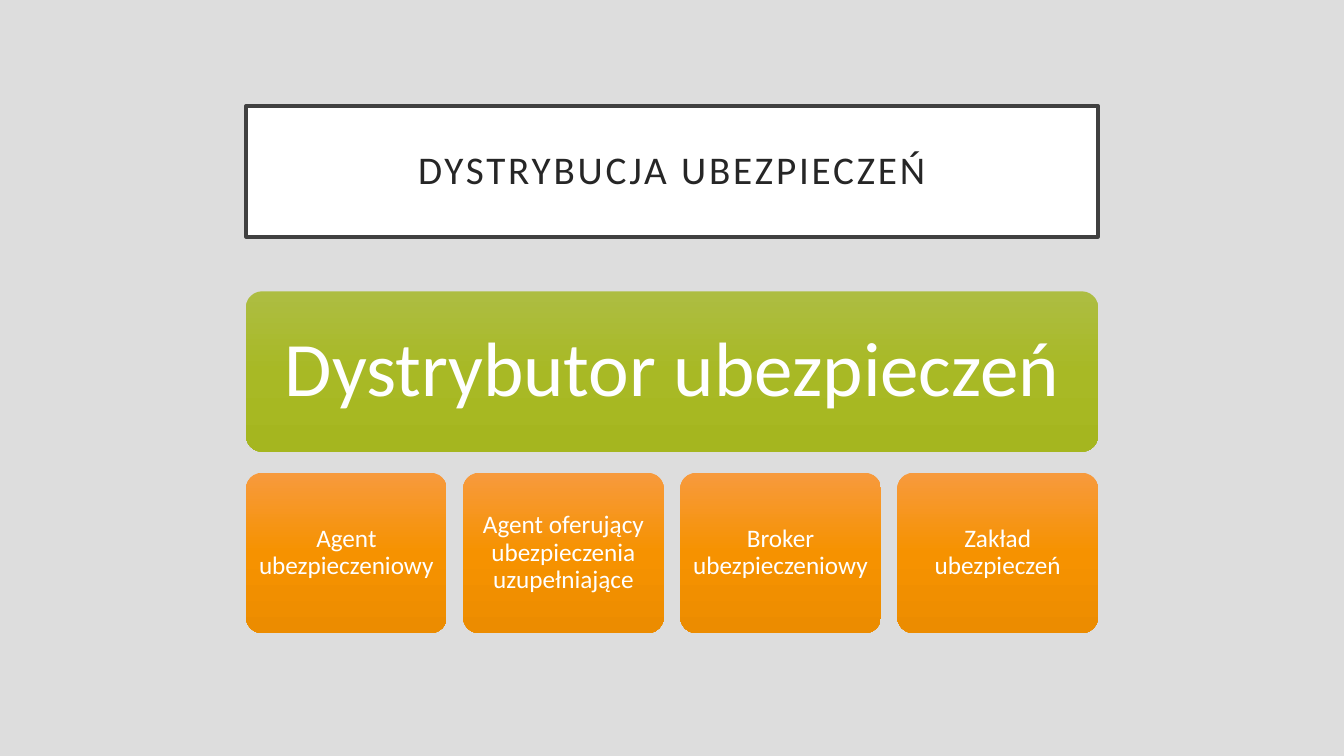
from copy import deepcopy

from pptx import Presentation
from pptx.dml.color import RGBColor
from pptx.enum.shapes import MSO_SHAPE
from pptx.enum.text import MSO_ANCHOR, MSO_AUTO_SIZE, PP_ALIGN
from pptx.oxml.ns import qn
from pptx.util import Inches, Pt

# Content
TITLE = "DYSTRYBUCJA UBEZPIECZEŃ"
HEADING = "Dystrybutor ubezpieczeń"
DISTRIBUTORS = [
    "Agent ubezpieczeniowy",
    "Agent oferujący ubezpieczenia uzupełniające",
    "Broker ubezpieczeniowy",
    "Zakład ubezpieczeń",
]

# Colours
BACKGROUND = RGBColor(0xDD, 0xDD, 0xDD)
WHITE = RGBColor(0xFF, 0xFF, 0xFF)
FRAME = RGBColor(0x40, 0x40, 0x40)
TITLE_TEXT = RGBColor(0x26, 0x26, 0x26)
GREENS = [RGBColor(0xAD, 0xBD, 0x42), RGBColor(0xA8, 0xB9, 0x25), RGBColor(0xA5, 0xB6, 0x1F)]
ORANGES = [RGBColor(0xF7, 0x9A, 0x3D), RGBColor(0xF6, 0x92, 0x00), RGBColor(0xEC, 0x8C, 0x00)]

# Layout, in inches
LEFT, WIDTH = 2.44, 8.45
TITLE_TOP, TITLE_HEIGHT = 1.05, 1.3
HEADING_TOP, ROW_TOP, BOX_HEIGHT = 2.89, 4.69, 1.59
BOX_WIDTH = 1.99
STEP = (WIDTH - BOX_WIDTH) / (len(DISTRIBUTORS) - 1)


def set_text(sp, text, size, color, inset):
    tf = sp.text_frame
    tf.text = text
    tf.word_wrap = True
    tf.auto_size = MSO_AUTO_SIZE.NONE
    tf.vertical_anchor = MSO_ANCHOR.MIDDLE
    tf.margin_left = tf.margin_right = tf.margin_top = tf.margin_bottom = Inches(inset)
    p = tf.paragraphs[0]
    p.alignment = PP_ALIGN.CENTER
    p.line_spacing = 0.9
    r = p.runs[0]
    r.font.name = "Calibri"
    r.font.size = Pt(size)
    r.font.color.rgb = color
    return r


def add_box(s, left, top, width, text, size, inset, colors):
    sp = s.shapes.add_shape(MSO_SHAPE.ROUNDED_RECTANGLE, Inches(left), Inches(top),
                            Inches(width), Inches(BOX_HEIGHT))
    sp.adjustments[0] = 0.1
    sp.shadow.inherit = False
    sp.line.fill.background()
    sp.fill.gradient()
    sp.fill.gradient_angle = 270
    # The default gradient has two stops; a third is added
    stops = sp._element.spPr.find(qn("a:gradFill")).find(qn("a:gsLst"))
    stops.append(deepcopy(stops[0]))
    for stop, position, color in zip(sp.fill.gradient_stops, (0, 0.5, 1), colors):
        stop.position = position
        stop.color.rgb = color
    set_text(sp, text, size, WHITE, inset)


prs = Presentation()
prs.slide_width, prs.slide_height = Inches(13.33), Inches(7.5)
s = prs.slides.add_slide(prs.slide_layouts[5])
s.background.fill.solid()
s.background.fill.fore_color.rgb = BACKGROUND

# Framed title
title = s.shapes.title
title.left, title.top = Inches(LEFT), Inches(TITLE_TOP)
title.width, title.height = Inches(WIDTH), Inches(TITLE_HEIGHT)
title.fill.solid()
title.fill.fore_color.rgb = WHITE
title.line.color.rgb = FRAME
title.line.width = Pt(2.5)
r = set_text(title, TITLE, 28, TITLE_TEXT, 0.2)
r.font._element.set("spc", "200")

# Heading box above the row of distributors
add_box(s, LEFT, HEADING_TOP, WIDTH, HEADING, 55, 0.23, GREENS)
for i, name in enumerate(DISTRIBUTORS):
    add_box(s, LEFT + i * STEP, ROW_TOP, BOX_WIDTH, name, 18, 0.07, ORANGES)

prs.save("out.pptx")
